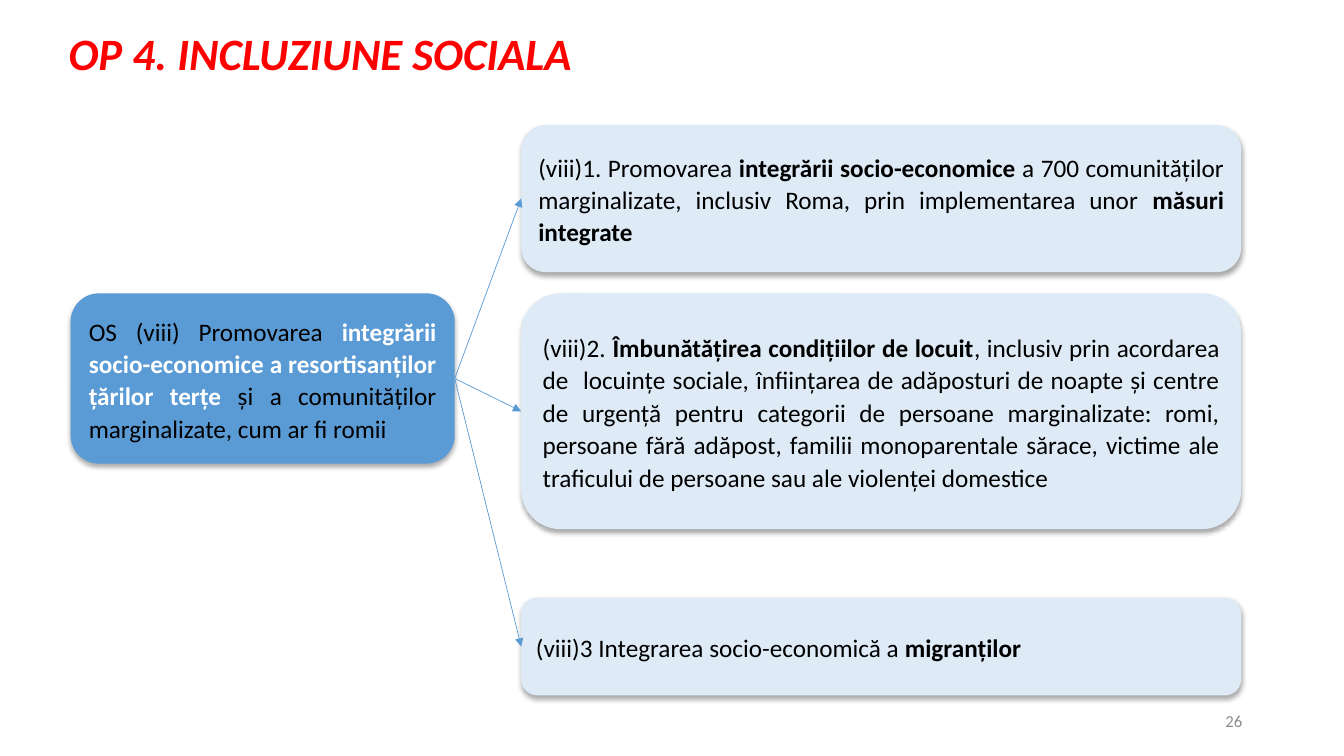
from lxml import etree
from pptx import Presentation
from pptx.dml.color import RGBColor
from pptx.enum.shapes import MSO_CONNECTOR, MSO_SHAPE
from pptx.enum.text import MSO_ANCHOR, MSO_AUTO_SIZE, PP_ALIGN
from pptx.oxml import parse_xml
from pptx.oxml.ns import qn
from pptx.util import Inches, Pt

BLACK = RGBColor(0x00, 0x00, 0x00)
WHITE = RGBColor(0xFF, 0xFF, 0xFF)
RED = RGBColor(0xFF, 0x00, 0x00)
GREY = RGBColor(0x8C, 0x8C, 0x8C)
BLUE = RGBColor(0x5B, 0x9B, 0xD5)
PALE = RGBColor(0xDE, 0xEB, 0xF7)

CARD = MSO_SHAPE.FLOWCHART_ALTERNATE_PROCESS
STRAIGHT = MSO_CONNECTOR.STRAIGHT
MIDDLE = MSO_ANCHOR.MIDDLE
LEFT, RIGHT, JUSTIFY = PP_ALIGN.LEFT, PP_ALIGN.RIGHT, PP_ALIGN.JUSTIFY
LEFT_SITE, RIGHT_SITE = 1, 3

SHADOW = """<a:effectLst xmlns:a="http://schemas.openxmlformats.org/drawingml/2006/main">
<a:outerShdw blurRad="44450" dist="27940" dir="5400000" algn="ctr" rotWithShape="0">
<a:srgbClr val="000000"><a:alpha val="32000"/></a:srgbClr>
</a:outerShdw></a:effectLst>"""

GOAL = [
    ("OS (viii) Promovarea ", False),
    ("integrării socio-economice a resortisanților țărilor terțe", True),
    (" și a comunităților marginalizate, cum ar fi romii", False),
]
# Top and height of each measure, with its text as (words, bold) runs
MEASURES = [
    (1.24, 1.46, [
        ("(viii)1. Promovarea ", False),
        ("integrării socio-economice", True),
        (" a 700 comunităților marginalizate, inclusiv Roma, prin "
         "implementarea unor ", False),
        ("măsuri integrate", True),
    ]),
    (2.91, 2.34, [
        ("(viii)2. ", False),
        ("Îmbunătățirea condițiilor de locuit", True),
        (", inclusiv prin acordarea de  locuințe sociale, înființarea de "
         "adăposturi de noapte și centre de urgență pentru categorii de "
         "persoane marginalizate: romi, persoane fără adăpost, familii "
         "monoparentale sărace, victime ale traficului de persoane sau ale "
         "violenței domestice", False),
    ]),
    (5.93, 0.97, [
        ("(viii)3 Integrarea socio-economică a ", False),
        ("migranților", True),
    ]),
]


def write(frame, runs, size=18, color=BLACK, strong=None, italic=False,
          align=LEFT, anchor=MIDDLE, wrap=True, line=None, after=None):
    """Fill a frame with (words, bold) runs; strong is the colour of bold ones."""
    frame.word_wrap = wrap
    frame.auto_size = MSO_AUTO_SIZE.NONE
    frame.vertical_anchor = anchor
    para = frame.paragraphs[0]
    para.alignment = align
    para.line_spacing = line
    para.space_after = after
    for words, bold in runs:
        run = para.add_run()
        run.text = words
        font = run.font
        font.name, font.size = "Calibri", Pt(size)
        font.bold, font.italic = bold, italic
        font.color.rgb = strong if bold and strong else color


def place(shape, box):
    shape.left, shape.top, shape.width, shape.height = map(Inches, box)


def add_title(slide, box):
    title = slide.shapes.title
    place(title, box)
    write(title.text_frame, [("OP 4. INCLUZIUNE SOCIALA", True)], size=32,
          color=RED, italic=True, anchor=MSO_ANCHOR.TOP, wrap=False)


def add_card(slide, box, runs, fill, strong=None):
    card = slide.shapes.add_shape(CARD, *map(Inches, box))
    card.fill.solid()
    card.fill.fore_color.rgb = fill
    card.line.fill.background()
    card._element.spPr.append(parse_xml(SHADOW))
    write(card.text_frame, runs, strong=strong, align=JUSTIFY,
          line=1.07, after=Pt(8))
    return card


def add_arrow(slide, start, end):
    arrow = slide.shapes.add_connector(STRAIGHT, 0, 0, 0, 0)
    arrow.begin_connect(start, RIGHT_SITE)
    arrow.end_connect(end, LEFT_SITE)
    arrow.line.color.rgb = BLUE
    arrow.line.width = Pt(0.5)
    etree.SubElement(arrow.line._get_or_add_ln(), qn("a:tailEnd"),
                     type="triangle")
    etree.SubElement(arrow._element.spPr, qn("a:effectLst"))


def add_tree(slide, box):
    """Goal card at the left of the box, linked to the measures at its right."""
    left, top, width, height = box
    goal = add_card(slide, (left, top + 1.67, 3.81, 1.69), GOAL, BLUE, WHITE)
    wide = 7.14
    for y, tall, runs in MEASURES:
        card = add_card(slide, (left + width - wide, y, wide, tall), runs, PALE)
        add_arrow(slide, goal, card)


def add_number(slide, box):
    number = slide.shapes.add_textbox(*map(Inches, box))
    write(number.text_frame, [("26", False)], size=12, color=GREY, align=RIGHT)


def main():
    deck = Presentation()
    deck.slide_width, deck.slide_height = Inches(13.33), Inches(7.5)
    slide = deck.slides.add_slide(deck.slide_layouts[5])
    add_title(slide, (0.58, 0.21, 5.24, 0.64))
    add_tree(slide, (0.7, 1.24, 11.61, 5.66))
    add_number(slide, (9.42, 6.95, 3, 0.4))
    deck.save("out.pptx")


if __name__ == "__main__":
    main()
